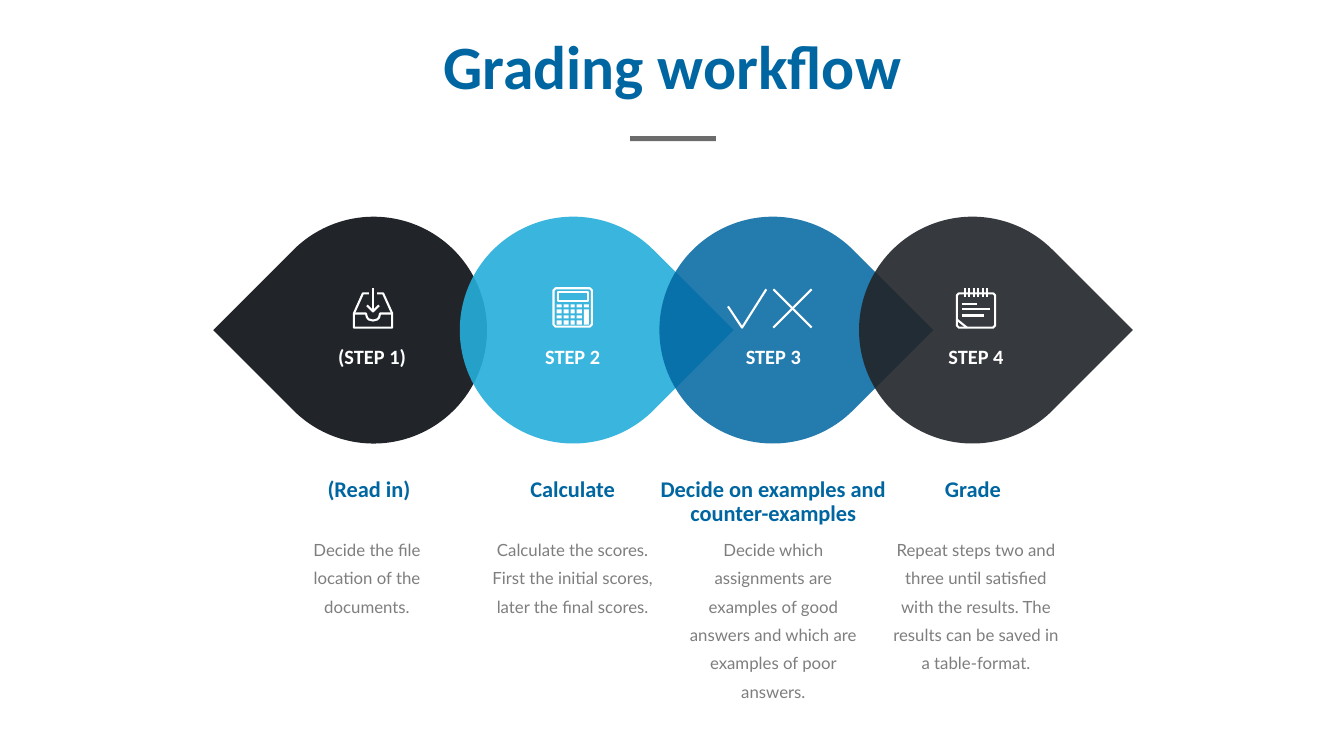
"""Build the grading workflow slide: four linked steps with icons and captions."""
from dataclasses import dataclass

from lxml import etree
from pptx import Presentation
from pptx.dml.color import RGBColor
from pptx.enum.shapes import MSO_SHAPE
from pptx.enum.text import MSO_ANCHOR, MSO_AUTO_SIZE, PP_ALIGN
from pptx.oxml.ns import qn
from pptx.util import Inches, Pt

TEARDROP, RECT = MSO_SHAPE.TEAR, MSO_SHAPE.RECTANGLE
CENTER, TOP, NO_FIT = PP_ALIGN.CENTER, MSO_ANCHOR.TOP, MSO_AUTO_SIZE.NONE

Contour = list[tuple[float, float]]


@dataclass(frozen=True)
class Theme:
    blue: str = "0066A1"
    sky: str = "25AEDB"
    ink: str = "212428"
    white: str = "FFFFFF"
    rule: str = "6B6B6B"
    grey: str = "7E7E7E"
    head_font: str = "Calibri"
    body_font: str = "Lato"
    title_size: float = 44
    heading_size: float = 16
    label_size: float = 14.5
    body_size: float = 12
    icon_line: float = 1.5


@dataclass(frozen=True)
class Step:
    label: str
    heading: str
    body: str
    color: str
    opacity: int
    label_x: float
    heading_x: float
    body_x: float
    rotation: int = 45


@dataclass(frozen=True)
class Icon:
    left: float
    top: float
    contours: list[Contour]
    filled: bool = False


def box(left: float, top: float, right: float, bottom: float) -> Contour:
    """Return a closed rectangle."""
    return [(left, top), (right, top), (right, bottom), (left, bottom), (left, top)]


def frame(left: float, top: float, right: float, bottom: float, cut: float = 2) -> Contour:
    """Return a closed rectangle with clipped corners."""
    return [(left + cut, top), (right - cut, top), (right, top + cut), (right, bottom - cut),
            (right - cut, bottom), (left + cut, bottom), (left, bottom - cut),
            (left, top + cut), (left + cut, top)]


def key_y(row: int) -> float:
    """Return the top of a row of calculator keys."""
    return 17 + 5.4 * row


THEME = Theme()
DROP_LEFT, DROP_TOP, DROP_SIZE, DROP_PITCH = 2.58, 2.15, 2.25, 1.98
LABEL_WIDTH, HEADING_WIDTH, BODY_WIDTH = 1.2, 2.48, 1.69

STEPS = [
    Step("(STEP 1)", "(Read in)", "Decide the file location of the documents.",
         THEME.ink, 100, 3.69, 3.66, 3.64, rotation=225),
    Step("STEP 2", "Calculate",
         "Calculate the scores. First the initial scores, later the final scores.",
         THEME.sky, 90, 5.68, 5.68, 5.68),
    Step("STEP 3", "Decide on examples and counter-examples",
         "Decide which assignments are examples of good answers and which are "
         "examples of poor answers.",
         THEME.blue, 86, 7.67, 7.67, 7.67),
    Step("STEP 4", "Grade",
         "Repeat steps two and three until satisfied with the results. The results "
         "can be saved in a table-format.",
         THEME.ink, 90, 9.68, 9.65, 9.68),
]

KEYS = [box(4 + 6.75 * col, key_y(row), 9 + 6.75 * col, key_y(row) + 3.5)
        for row in range(4) for col in range(5) if row == 0 or col < 4]
RINGS = [[(9 + 4.4 * i, 0), (9 + 4.4 * i, 9)] for i in range(6)]

ICONS = [
    Icon(3.5, 2.86, [
        [(16, 5), (10, 5), (1, 25), (1, 39), (39, 39), (39, 25), (30, 5), (24, 5)],
        [(1, 25), (13, 25), (14, 29), (16, 31), (20, 32), (24, 31), (26, 29), (27, 25), (39, 25)],
        [(20, 0), (20, 23)],
        [(14, 17), (20, 23), (26, 17)],
    ]),
    Icon(5.48, 2.85, [frame(1, 1, 39, 39), box(5, 5, 35, 14)]),
    Icon(5.48, 2.85, KEYS + [box(31, key_y(1), 36, 37)], filled=True),
    Icon(7.21, 2.86, [[(1, 18), (15, 39), (39, 1)]]),
    Icon(7.66, 2.86, [[(1, 1), (39, 39)], [(39, 1), (1, 39)]]),
    Icon(9.48, 2.86, RINGS + [
        frame(1, 5, 39, 39), [(1, 31), (11, 39)],
        [(6, 16), (21, 16)], [(6, 21), (34, 21)], [(6, 27), (28, 27)],
    ]),
]


def rgb(color: str) -> RGBColor:
    """Turn a hex string into a colour."""
    return RGBColor.from_string(color)


def write(sp, text: str, *, size: float, color: str, font: str = THEME.head_font,
          bold: bool = True, line: float | None = None, after: float = 0,
          inset: tuple[float, float] = (0, 0)) -> None:
    """Write one centred paragraph into a shape."""
    tf = sp.text_frame
    tf.word_wrap, tf.auto_size, tf.vertical_anchor = True, NO_FIT, TOP
    tf.margin_left = tf.margin_right = Inches(inset[0])
    tf.margin_top = tf.margin_bottom = Inches(inset[1])
    p = tf.paragraphs[0]
    p.alignment, p.space_after = CENTER, Pt(after)
    if line is not None:
        p.line_spacing = Pt(line)
    r = p.add_run()
    r.text = text
    r.font.name, r.font.size, r.font.bold = font, Pt(size), bold
    r.font.color.rgb = rgb(color)


def add_text(s, text: str, center: float, top: float, width: float, height: float,
             **style) -> None:
    """Add a text box centred on a horizontal position."""
    sp = s.shapes.add_textbox(Inches(center - width / 2), Inches(top),
                              Inches(width), Inches(height))
    write(sp, text, **style)


def add_block(s, kind, left: float, top: float, width: float, height: float,
              color: str, opacity: int = 100):
    """Add a borderless filled shape."""
    sp = s.shapes.add_shape(kind, Inches(left), Inches(top), Inches(width), Inches(height))
    sp.shadow.inherit = False
    sp.fill.solid()
    sp.fill.fore_color.rgb = rgb(color)
    sp.line.fill.background()
    if opacity < 100:
        clr = sp.element.spPr.find(".//" + qn("a:srgbClr"))
        etree.SubElement(clr, qn("a:alpha"), val=str(opacity * 1000))
    return sp


def add_icon(s, icon: Icon) -> None:
    """Draw an icon whose points are in hundredths of an inch."""
    first, *rest = icon.contours
    builder = s.shapes.build_freeform(*first[0], scale=Inches(0.01))
    builder.add_line_segments(first[1:], close=False)
    for contour in rest:
        builder.move_to(*contour[0])
        builder.add_line_segments(contour[1:], close=False)
    sp = builder.convert_to_shape(Inches(icon.left), Inches(icon.top))
    sp.shadow.inherit = False
    if icon.filled:
        sp.fill.solid()
        sp.fill.fore_color.rgb = rgb(THEME.white)
        sp.line.fill.background()
    else:
        sp.fill.background()
        sp.line.color.rgb = rgb(THEME.white)
        sp.line.width = Pt(THEME.icon_line)


def main() -> None:
    """Build and save the slide."""
    prs = Presentation()
    prs.slide_width, prs.slide_height = Inches(13.33), Inches(7.5)
    s = prs.slides.add_slide(prs.slide_layouts[5])
    title = s.shapes.title
    title.left, title.top = Inches(4.15), Inches(0.26)
    title.width, title.height = Inches(5.04), Inches(0.79)
    write(title, "Grading workflow", size=THEME.title_size, color=THEME.blue,
          inset=(0.05, 0.02))
    add_block(s, RECT, 6.25, 1.35, 0.85, 0.05, THEME.rule)

    for i, step in enumerate(STEPS):
        drop = add_block(s, TEARDROP, DROP_LEFT + i * DROP_PITCH, DROP_TOP,
                         DROP_SIZE, DROP_SIZE, step.color, step.opacity)
        drop.rotation = step.rotation
    for step in STEPS:
        add_text(s, step.label, step.label_x, 3.4, LABEL_WIDTH, 0.27, line=18.7, after=16,
                 size=THEME.label_size, color=THEME.white)
        add_text(s, step.heading, step.heading_x, 4.74, HEADING_WIDTH, 0.48, line=17.3,
                 after=16, size=THEME.heading_size, color=THEME.blue)
        add_text(s, step.body, step.body_x, 5.27, BODY_WIDTH, 1.68, line=20.3, bold=False,
                 size=THEME.body_size, color=THEME.grey, font=THEME.body_font)
    for icon in ICONS:
        add_icon(s, icon)
    prs.save("out.pptx")


if __name__ == "__main__":
    main()
